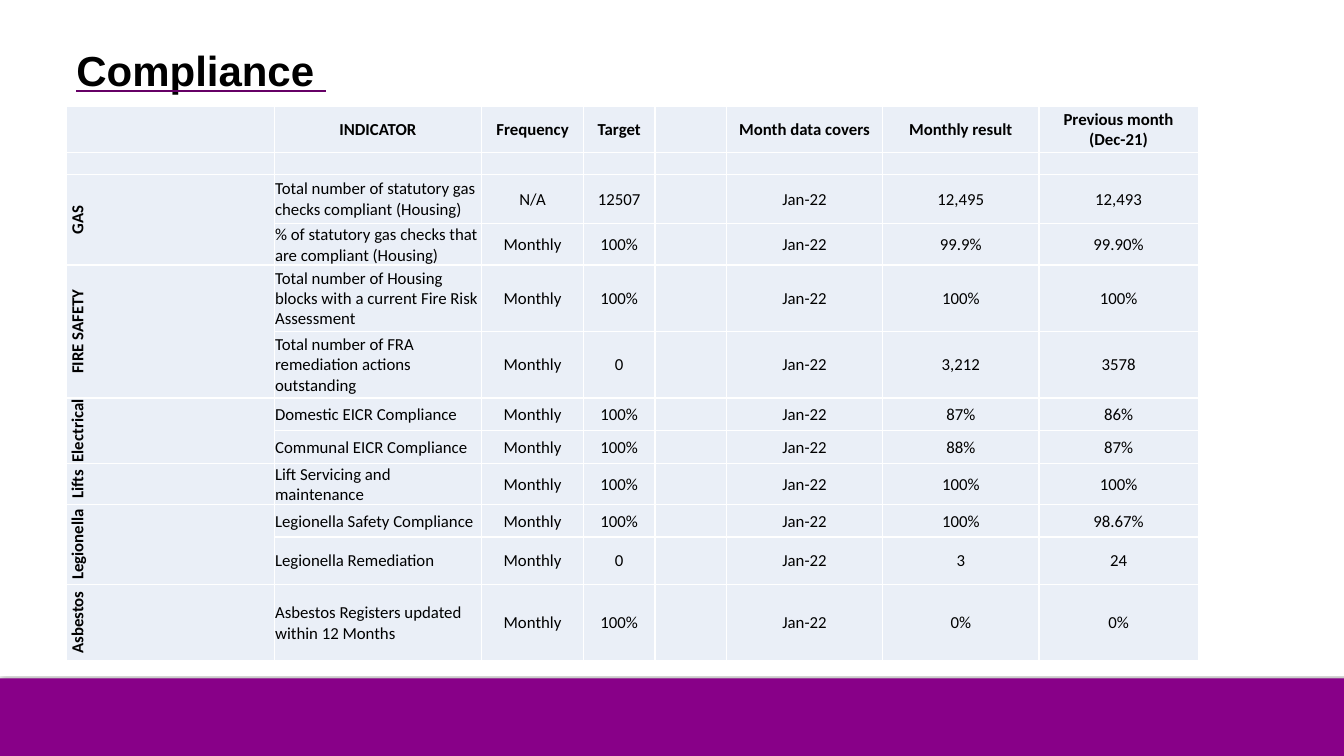
from dataclasses import dataclass

from lxml import etree
from pptx import Presentation
from pptx.dml.color import RGBColor
from pptx.enum.shapes import MSO_SHAPE
from pptx.enum.text import MSO_ANCHOR, PP_ALIGN
from pptx.oxml import parse_xml
from pptx.oxml.ns import nsdecls, qn
from pptx.util import Pt

RECTANGLE = MSO_SHAPE.RECTANGLE
MIDDLE = MSO_ANCHOR.MIDDLE
LEFT, CENTER = PP_ALIGN.LEFT, PP_ALIGN.CENTER


@dataclass(frozen=True)
class Theme:
    band: str = "880088"
    underline: str = "660066"
    cell: str = "EAEFF7"
    border: str = "FFFFFF"
    text: str = "000000"
    title_font: str = "Arial"
    table_font: str = "Calibri"
    title_size: int = 30
    table_size: int = 12


THEME = Theme()

COLUMN_WIDTHS = [148.3, 148.3, 72.7, 51.1, 51.1, 111.6, 111.6, 113.8]
ROW_HEIGHTS = [32.4, 15.8, 35.3, 24.5, 47.5, 47.5, 23, 23.8, 27.4, 23, 33.8, 54.7]
HEADERS = ["", "INDICATOR", "Frequency", "Target", "", "Month data covers",
           "Monthly result", "Previous month (Dec-21)"]
MONTH = "Jan-22"
GROUPS = [
    ("GAS", [
        ("Total number of statutory gas checks compliant (Housing)",
         "N/A", "12507", "12,495", "12,493"),
        ("% of statutory gas checks that are compliant (Housing)",
         "Monthly", "100%", "99.9%", "99.90%"),
    ]),
    ("FIRE SAFETY", [
        ("Total number of Housing blocks with a current Fire Risk Assessment",
         "Monthly", "100%", "100%", "100%"),
        ("Total number of FRA remediation actions outstanding",
         "Monthly", "0", "3,212", "3578"),
    ]),
    ("Electrical", [
        ("Domestic EICR Compliance", "Monthly", "100%", "87%", "86%"),
        ("Communal EICR Compliance", "Monthly", "100%", "88%", "87%"),
    ]),
    ("Lifts", [
        ("Lift Servicing and maintenance", "Monthly", "100%", "100%", "100%"),
    ]),
    ("Legionella", [
        ("Legionella Safety Compliance", "Monthly", "100%", "100%", "98.67%"),
        ("Legionella Remediation", "Monthly", "0", "3", "24"),
    ]),
    ("Asbestos", [
        ("Asbestos Registers updated within 12 Months",
         "Monthly", "100%", "0%", "0%"),
    ]),
]


def style_run(run, font, size, bold):
    run.font.name = font
    run.font.size = Pt(size)
    run.font.bold = bold
    run.font.color.rgb = RGBColor.from_string(THEME.text)


def add_band(slide):
    band = slide.shapes.add_shape(RECTANGLE, Pt(0), Pt(484.5), Pt(960), Pt(56.9))
    band.fill.solid()
    band.fill.fore_color.rgb = RGBColor.from_string(THEME.band)
    band.line.fill.background()
    band.shadow.inherit = False
    effects = band._element.spPr.find(qn("a:effectLst"))
    effects.append(parse_xml(
        f'<a:outerShdw {nsdecls("a")} blurRad="{Pt(1)}" dist="0" dir="5400000">'
        f'<a:srgbClr val="{THEME.text}"><a:alpha val="50000"/></a:srgbClr>'
        '</a:outerShdw>'))


def add_title(slide, text):
    box = slide.shapes.add_textbox(Pt(47.5), Pt(18.7), Pt(828), Pt(66.2))
    frame = box.text_frame
    frame.word_wrap = True
    frame.vertical_anchor = MIDDLE
    frame.text = text
    paragraph = frame.paragraphs[0]
    paragraph.line_spacing = 0.9
    run = paragraph.runs[0]
    style_run(run, THEME.title_font, THEME.title_size, True)
    run.font.underline = True
    latin = run._r.get_or_add_rPr().find(qn("a:latin"))
    latin.addprevious(parse_xml(
        f'<a:uFill {nsdecls("a")}><a:solidFill>'
        f'<a:srgbClr val="{THEME.underline}"/></a:solidFill></a:uFill>'))


def add_borders(cell):
    properties = cell._tc.get_or_add_tcPr()
    for side in ("lnL", "lnR", "lnT", "lnB"):
        line = etree.SubElement(properties, qn(f"a:{side}"), w=str(Pt(1)))
        fill = etree.SubElement(line, qn("a:solidFill"))
        etree.SubElement(fill, qn("a:srgbClr"), val=THEME.border)


def format_cell(cell):
    add_borders(cell)
    cell.fill.solid()
    cell.fill.fore_color.rgb = RGBColor.from_string(THEME.cell)
    cell.margin_left = cell.margin_right = cell.margin_top = Pt(0.72)
    cell.margin_bottom = Pt(0)
    cell.vertical_anchor = MIDDLE
    end = cell.text_frame.paragraphs[0]._p.get_or_add_endParaRPr()
    end.set("sz", str(THEME.table_size * 100))


def write_cell(cell, text, bold=False, alignment=CENTER):
    if not text:
        return
    paragraph = cell.text_frame.paragraphs[0]
    paragraph.alignment = alignment
    run = paragraph.add_run()
    run.text = text
    style_run(run, THEME.table_font, THEME.table_size, bold)


def write_group(table, first_row, name, indicators):
    label = table.cell(first_row, 0)
    if len(indicators) > 1:
        label.merge(table.cell(first_row + len(indicators) - 1, 0))
    write_cell(label, name, bold=True)
    label._tc.get_or_add_tcPr().set("vert", "vert270")
    for row, indicator in enumerate(indicators, first_row):
        title, frequency, target, result, previous = indicator
        write_cell(table.cell(row, 1), title, alignment=LEFT)
        values = [frequency, target, "", MONTH, result, previous]
        for column, value in enumerate(values, 2):
            write_cell(table.cell(row, column), value)


def add_compliance_table(slide):
    frame = slide.shapes.add_table(
        len(ROW_HEIGHTS), len(COLUMN_WIDTHS), Pt(47.5), Pt(76.3),
        Pt(sum(COLUMN_WIDTHS)), Pt(sum(ROW_HEIGHTS)))
    table = frame.table
    table.first_row = False
    table.horz_banding = False
    for column, width in zip(table.columns, COLUMN_WIDTHS):
        column.width = Pt(width)
    for row, height in zip(table.rows, ROW_HEIGHTS):
        row.height = Pt(height)
    for cell in table.iter_cells():
        format_cell(cell)
    for column, header in enumerate(HEADERS):
        write_cell(table.cell(0, column), header, bold=True)
    first_row = 2
    for name, indicators in GROUPS:
        write_group(table, first_row, name, indicators)
        first_row += len(indicators)


def main():
    presentation = Presentation()
    presentation.slide_width = Pt(960)
    presentation.slide_height = Pt(540)
    slide = presentation.slides.add_slide(presentation.slide_layouts[6])
    add_band(slide)
    add_title(slide, "Compliance ")
    add_compliance_table(slide)
    presentation.save("out.pptx")


if __name__ == "__main__":
    main()
